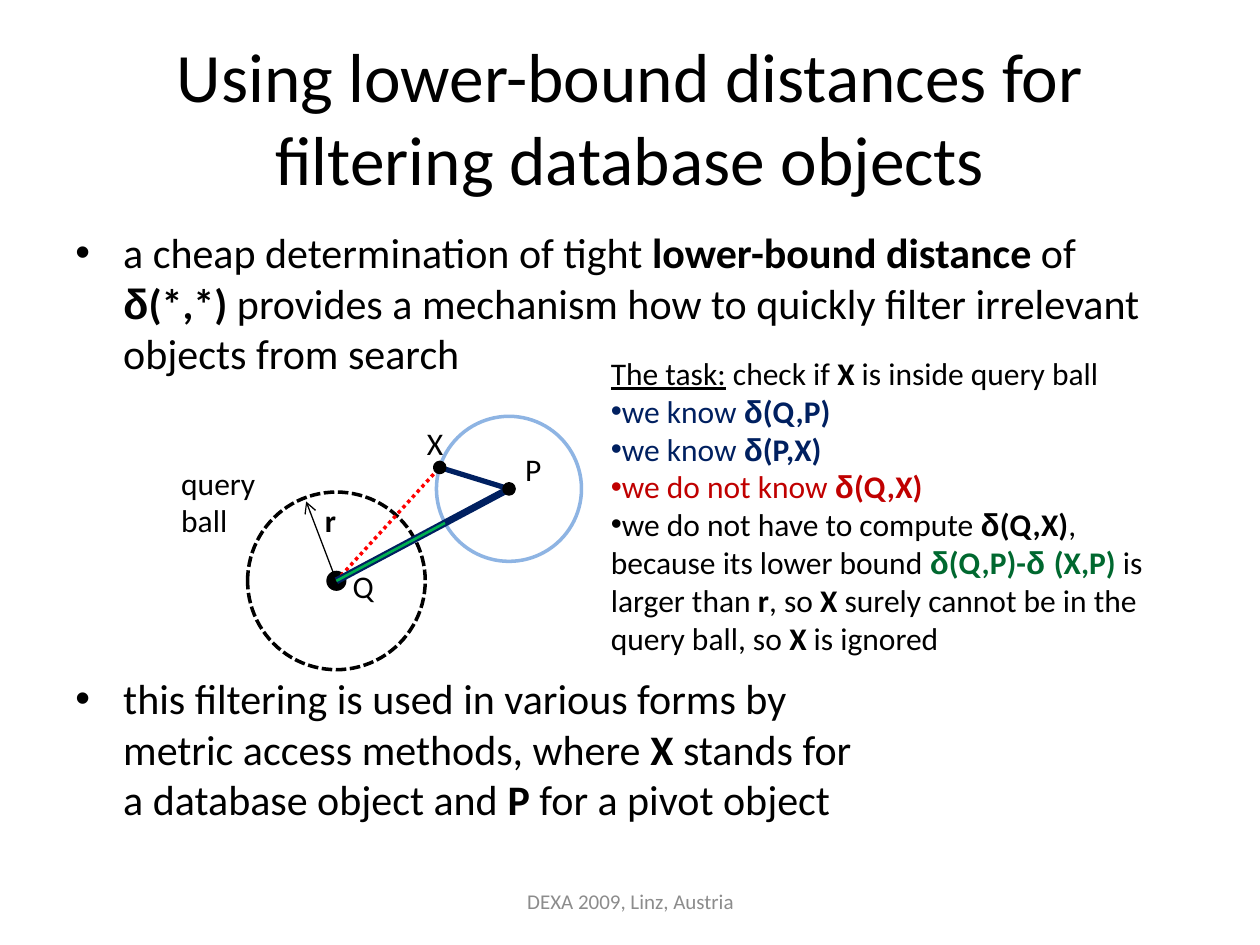
"""Build a slide on filtering database objects with lower-bound distances."""
from math import dist

from lxml.etree import SubElement
from pptx import Presentation
from pptx.dml.color import RGBColor
from pptx.enum.dml import MSO_LINE
from pptx.enum.shapes import MSO_CONNECTOR, MSO_SHAPE
from pptx.enum.text import MSO_ANCHOR, PP_ALIGN
from pptx.oxml.ns import qn
from pptx.util import Inches, Pt

COLORS = {"black": "000000", "grey": "8C8C8C", "known": "002060", "unknown": "C00000",
          "dotted": "FF0000", "pivot": "8EB4E3", "bound": "00B050", "formula": "00682F"}
COLUMNS, ROWS = 100, 75

TITLE = [[("Using lower-bound distances for filtering database objects",)]]
FOOTER = [[("DEXA 2009, Linz, Austria", "", "grey")]]
MECHANISM = [[("a cheap determination of tight ",), ("lower-bound distance ", "bold"), ("of ",),
              ("δ", "bold arial"), ("(*,*)", "bold"),
              (" provides a mechanism how to quickly filter irrelevant objects from search",)]]
USAGE = [[("this filtering is used in various forms by \vmetric access methods, where ",),
          ("X", "bold"), (" stands for \va database object and ",), ("P", "bold"),
          (" for a pivot object",)]]
TASK = [[("The task:", "underline"), (" check if ",), ("X", "bold"), (" is inside query ball",)]]
FACTS = [
    [("we know ", "", "known"), ("δ", "bold arial", "known"), ("(Q,P)", "bold", "known")],
    [("we know ", "", "known"), ("δ", "bold arial", "known"), ("(P,X)", "bold", "known")],
    [("we do not know ", "", "unknown"), ("δ", "bold arial", "unknown"),
     ("(Q,X)", "bold", "unknown")],
    [("we do not have to compute ",), ("δ", "bold arial"), ("(Q,X)", "bold"),
     (", because its lower bound ",), ("δ", "bold arial", "formula"),
     ("(Q,P)-", "bold", "formula"), ("δ ", "bold arial", "formula"),
     ("(X,P) ", "bold", "formula"), ("is larger than ",), ("r", "bold"), (", so ",),
     ("X", "bold"), (" surely cannot be in the query ball, so ",), ("X", "bold"),
     (" is ignored",)],
]
LABELS = [([[("query",)], [("ball",)]], (13.4, 36.3, 8.4, 7.1)),
          ([[("Q",)]], (27, 44.5, 3.6, 4)), ([[("P",)]], (40.7, 35.2, 3.1, 4)),
          ([[("X",)]], (32.9, 33.2, 3.4, 4)), ([[("r", "bold")]], (24.8, 39.3, 2.6, 4))]

query, pivot, candidate, ball_edge = (26.7, 46.1), (40.4, 38.8), (34.9, 37.1), (24.3, 39.8)
pivot_radius = dist(pivot, candidate)
bound_share = 1 - pivot_radius / dist(query, pivot)
bound_end = tuple(q + bound_share * (p - q) for q, p in zip(query, pivot))
CIRCLES = [(pivot, pivot_radius, None, "pivot", 2, None),
           (query, 0.8, "black", None, 0, None),
           (query, 7.05, None, "black", 2, MSO_LINE.SQUARE_DOT)]
POINTS = [(point, 0.4, "black", "black", 2, None) for point in (pivot, candidate)]
DISTANCES = [(query, candidate, "dotted", 2, MSO_LINE.ROUND_DOT, False),
             (pivot, candidate, "known", 3, None, False),
             (query, ball_edge, "black", 0.75, None, True),
             (query, pivot, "known", 4, None, False),
             (query, bound_end, "bound", 1.5, None, False)]

deck = Presentation()
deck.slide_width, deck.slide_height = Inches(10), Inches(7.5)
slide = deck.slides.add_slide(deck.slide_layouts[6])
column, row = deck.slide_width / COLUMNS, deck.slide_height / ROWS


def place(across, down):
    return round(across * column), round(down * row)


def color(name):
    return RGBColor.from_string(COLORS[name])


def add_bullet(paragraph, indent):
    properties = paragraph._p.get_or_add_pPr()
    properties.set("marL", str(Inches(indent)))
    properties.set("indent", str(-Inches(indent)))
    SubElement(properties, qn("a:buFont"), typeface="Arial")
    SubElement(properties, qn("a:buChar"), char="•")


def add_run(paragraph, size, words, style="", color_name="black"):
    for number, line in enumerate(words.split("\v")):
        if number:
            paragraph.add_line_break()
        run = paragraph.add_run()
        run.text = line
        font = run.font
        font.size, font.color.rgb = Pt(size), color(color_name)
        font.name = "Arial" if "arial" in style else "Calibri"
        font.bold, font.underline = "bold" in style, "underline" in style


def add_text(content, area, size, align=PP_ALIGN.LEFT, anchor=MSO_ANCHOR.TOP,
             indent=0, bullets_from=None):
    frame = slide.shapes.add_textbox(*place(*area[:2]), *place(*area[2:])).text_frame
    frame.word_wrap, frame.vertical_anchor = True, anchor
    for number, runs in enumerate(content):
        paragraph = frame.add_paragraph() if number else frame.paragraphs[0]
        paragraph.alignment = align
        if bullets_from is not None and number >= bullets_from:
            add_bullet(paragraph, indent)
        for run in runs:
            add_run(paragraph, size, *run)


def style_line(line, color_name, width, dash):
    line.color.rgb, line.width = color(color_name), Pt(width)
    if dash:
        line.dash_style = dash


def add_circle(center, radius, fill, outline, width, dash):
    corner = (center[0] - radius, center[1] - radius)
    circle = slide.shapes.add_shape(MSO_SHAPE.OVAL, *place(*corner),
                                    *place(2 * radius, 2 * radius))
    circle.shadow.inherit = False
    if fill:
        circle.fill.solid()
        circle.fill.fore_color.rgb = color(fill)
    else:
        circle.fill.background()
    if outline:
        style_line(circle.line, outline, width, dash)
    else:
        circle.line.fill.background()


def add_distance(start, end, color_name, width, dash, arrow):
    segment = slide.shapes.add_connector(MSO_CONNECTOR.STRAIGHT, *place(*start), *place(*end))
    style_line(segment.line, color_name, width, dash)
    if arrow:
        SubElement(segment.line._get_or_add_ln(), qn("a:tailEnd"), type="arrow")
    SubElement(segment._element.spPr, qn("a:effectLst"))


add_text(MECHANISM, (5, 17.5, 90, 13.5), 24, indent=0.38, bullets_from=0)
add_text(USAGE, (5, 52.9, 90, 13.5), 24, indent=0.38, bullets_from=0)
add_text(TITLE, (5, 3, 90, 12.5), 39.6, PP_ALIGN.CENTER, MSO_ANCHOR.MIDDLE)
add_text(FOOTER, (34.2, 69.5, 31.7, 4), 12, PP_ALIGN.CENTER, MSO_ANCHOR.MIDDLE)
for circle in CIRCLES:
    add_circle(*circle)
for distance in DISTANCES:
    add_distance(*distance)
for point in POINTS:
    add_circle(*point)
for label, area in LABELS:
    add_text(label, area, 18)
add_text(TASK + FACTS, (47.5, 27.6, 45.3, 25.2), 18, bullets_from=len(TASK))
deck.save("out.pptx")
